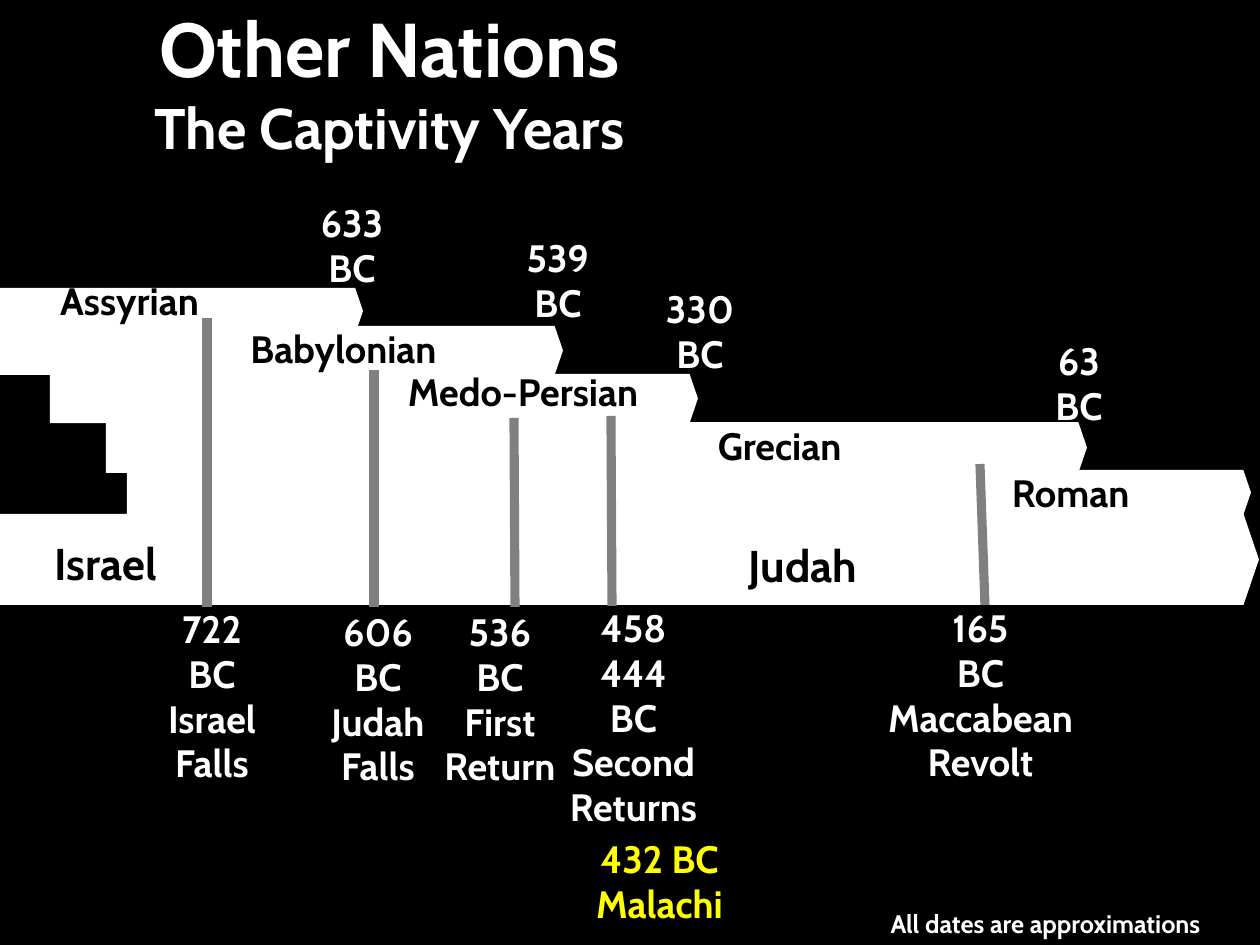
from dataclasses import dataclass

from lxml import etree
from pptx import Presentation
from pptx.dml.color import RGBColor
from pptx.enum.shapes import MSO_CONNECTOR, MSO_SHAPE
from pptx.enum.text import MSO_ANCHOR, MSO_AUTO_SIZE, PP_ALIGN
from pptx.oxml.ns import qn
from pptx.slide import Slide
from pptx.text.text import TextFrame
from pptx.util import Emu, Pt

EMU_PER_PX = 8000
FONT = "Cabin"
BLACK, WHITE, GRAY, YELLOW = "000000", "FFFFFF", "808080", "FFFF00"
ARROW_BAND = MSO_SHAPE.PENTAGON
STRAIGHT = MSO_CONNECTOR.STRAIGHT
CENTER = PP_ALIGN.CENTER
TOP, MIDDLE = MSO_ANCHOR.TOP, MSO_ANCHOR.MIDDLE
NO_AUTOFIT = MSO_AUTO_SIZE.NONE
TITLE_ONLY = 5


@dataclass
class Band:
    left: int
    top: int
    width: int
    height: int


@dataclass
class Label:
    text: str
    left: int
    top: int
    width: int
    height: int
    color: str = WHITE
    size: int = 24
    anchor: MSO_ANCHOR = TOP


@dataclass
class Marker:
    bottom_x: int
    bottom_y: int
    top_x: int
    top_y: int


BANDS = [
    Band(0, 288, 363, 46),
    Band(0, 326, 563, 49),
    Band(50, 374, 648, 49),
    Band(106, 422, 981, 51),
    Band(127, 470, 1124, 45),
    Band(0, 514, 1259, 91),
]

NATIONS = [
    Label("Assyrian", 38, 290, 183, 24, BLACK, anchor=MIDDLE),
    Label("Babylonian", 221, 319, 245, 63, BLACK, anchor=MIDDLE),
    Label("Medo-Persian", 395, 369, 256, 48, BLACK, anchor=MIDDLE),
    Label("Grecian", 697, 419, 165, 45, BLACK),
    Label("Roman", 988, 470, 165, 48, BLACK, anchor=MIDDLE),
    Label("Israel", 15, 520, 182, 89, BLACK, 28, MIDDLE),
    Label("Judah", 385, 524, 836, 85, BLACK, 28, MIDDLE),
]

EMPIRE_ENDS = [
    Label("633\nBC", 288, 196, 128, 101),
    Label("539\nBC", 494, 231, 128, 101),
    Label("330\nBC", 636, 282, 128, 101),
    Label("63\nBC", 1015, 334, 128, 101),
]

EVENTS = [
    Label("722\nBC\nIsrael\nFalls", 148, 602, 128, 198),
    Label("606\nBC\nJudah\nFalls", 314, 605, 128, 195),
    Label("536\nBC\nFirst\nReturn", 436, 605, 128, 195),
    Label("458\n444\nBC\nSecond\nReturns", 553, 601, 161, 242),
    Label("165\nBC\nMaccabean\nRevolt", 900, 601, 161, 242),
    Label("432 BC\nMalachi", 579, 832, 161, 95, YELLOW),
]

FOOTNOTE = Label("All dates are approximations", 828, 904, 435, 41, size=16)

MARKERS = [
    Marker(207, 607, 207, 318),
    Marker(374, 607, 374, 370),
    Marker(515, 607, 514, 418),
    Marker(612, 606, 611, 416),
    Marker(985, 605, 980, 464),
]


def px(length: int) -> Emu:
    return Emu(length * EMU_PER_PX)


def rgb(color: str) -> RGBColor:
    return RGBColor.from_string(color)


def write(frame: TextFrame, text: str, *, sizes: list[int],
          color: str = WHITE, anchor: MSO_ANCHOR = TOP) -> None:
    """Fill the frame with one centred paragraph per line; the last size repeats."""
    frame.text = text
    frame.word_wrap = False
    frame.auto_size = NO_AUTOFIT
    frame.vertical_anchor = anchor
    for index, paragraph in enumerate(frame.paragraphs):
        paragraph.alignment = CENTER
        paragraph.line_spacing = 0.98
        font = paragraph.runs[0].font
        font.name = FONT
        font.size = Pt(sizes[min(index, len(sizes) - 1)])
        font.bold = True
        font.color.rgb = rgb(color)


def add_title(slide: Slide) -> None:
    title = slide.shapes.title
    title.left, title.top, title.width, title.height = map(px, (46, 0, 687, 167))
    write(title.text_frame, "Other Nations\nThe Captivity Years", sizes=[48, 36])


def add_band(slide: Slide, band: Band) -> None:
    arrow = slide.shapes.add_shape(
        ARROW_BAND, px(band.left), px(band.top), px(band.width), px(band.height))
    arrow.adjustments[0] = 0.17
    arrow.shadow.inherit = False
    arrow.fill.solid()
    arrow.fill.fore_color.rgb = rgb(WHITE)
    arrow.line.fill.background()


def add_label(slide: Slide, label: Label) -> None:
    box = slide.shapes.add_textbox(
        px(label.left), px(label.top), px(label.width), px(label.height))
    write(box.text_frame, label.text, sizes=[label.size],
          color=label.color, anchor=label.anchor)


def add_marker(slide: Slide, marker: Marker) -> None:
    line = slide.shapes.add_connector(
        STRAIGHT, px(marker.bottom_x), px(marker.bottom_y),
        px(marker.top_x), px(marker.top_y))
    line.line.color.rgb = rgb(GRAY)
    line.line.width = Pt(5.75)
    etree.SubElement(line._element.spPr, qn("a:effectLst"))


def main() -> None:
    deck = Presentation()
    deck.slide_width, deck.slide_height = px(1260), px(945)
    slide = deck.slides.add_slide(deck.slide_layouts[TITLE_ONLY])
    slide.background.fill.solid()
    slide.background.fill.fore_color.rgb = rgb(BLACK)

    add_title(slide)
    for band in BANDS:
        add_band(slide, band)
    for label in [*NATIONS, *EMPIRE_ENDS, *EVENTS, FOOTNOTE]:
        add_label(slide, label)
    for marker in MARKERS:
        add_marker(slide, marker)

    deck.save("out.pptx")


if __name__ == "__main__":
    main()
